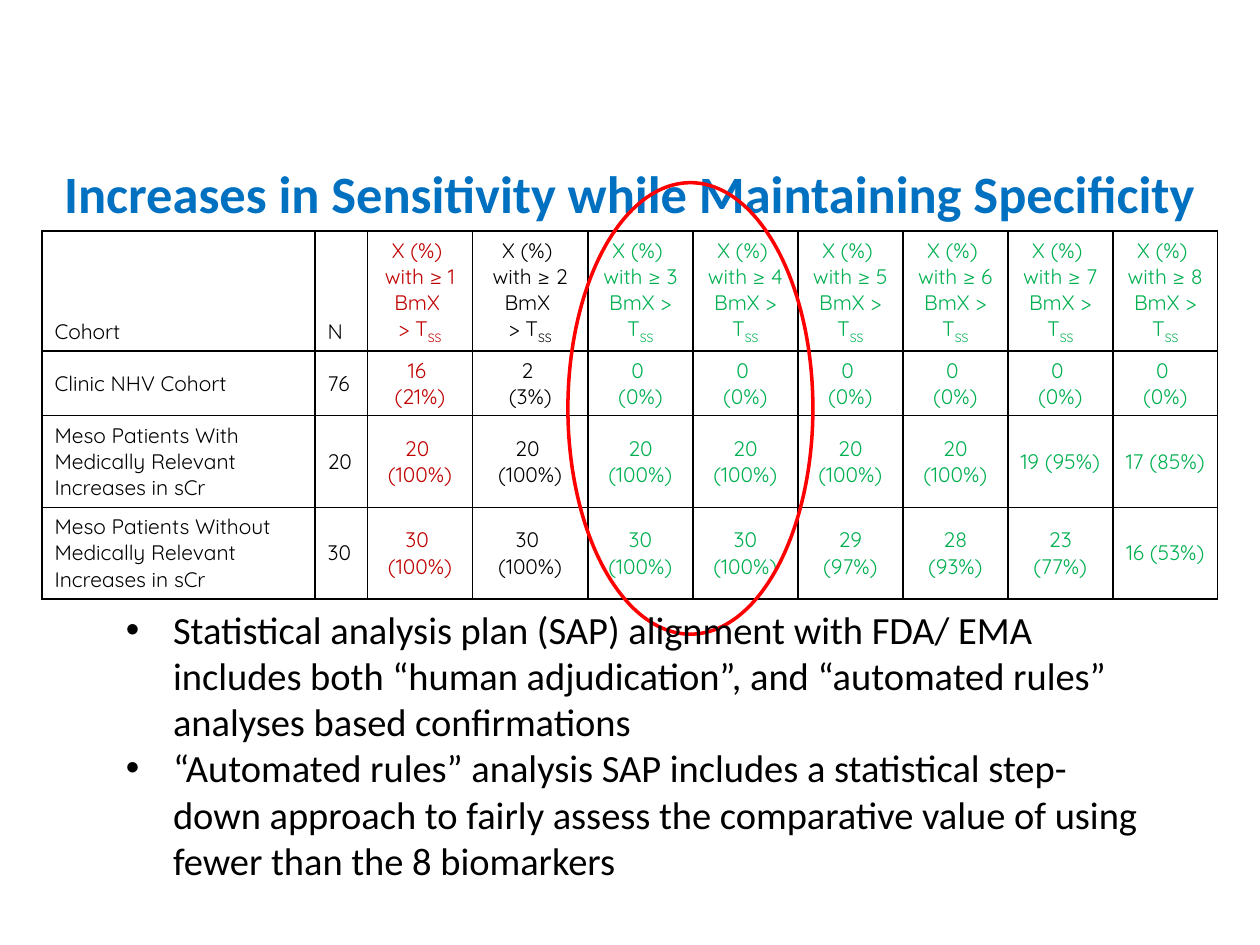
from lxml import etree
from pptx import Presentation
from pptx.dml.color import RGBColor
from pptx.enum.shapes import MSO_SHAPE
from pptx.enum.text import MSO_ANCHOR, MSO_AUTO_SIZE, PP_ALIGN
from pptx.oxml.ns import qn
from pptx.util import Pt

CENTER, LEFT = PP_ALIGN.CENTER, PP_ALIGN.LEFT
MIDDLE, BOTTOM, TOP = MSO_ANCHOR.MIDDLE, MSO_ANCHOR.BOTTOM, MSO_ANCHOR.TOP
GROW = MSO_AUTO_SIZE.SHAPE_TO_FIT_TEXT
OVAL = MSO_SHAPE.OVAL

BLACK, BLUE, RED = "000000", "0070C0", "FF0000"
DARK_RED, GREEN = "C00000", "00B050"

COLUMN_WIDTHS = [156, 30, 60, 66] + [60] * 6
COLUMN_COLORS = [BLACK, BLACK, DARK_RED, BLACK] + [GREEN] * 6
ROW_HEIGHTS = [68.5, 37, 52.4, 52.4]
COHORTS = [
    ["Clinic NHV Cohort", "76", "16 \n(21%)", "2 \n(3%)"] + ["0 \n(0%)"] * 6,
    ["Meso Patients With Medically Relevant Increases in sCr", "20",
     "20 \n(100%)", "20 \n(100%)"] + ["20 (100%)"] * 4
    + ["19 (95%)", "17 (85%)"],
    ["Meso Patients Without Medically Relevant Increases in sCr", "30",
     "30 \n(100%)", "30 \n(100%)", "30 (100%)", "30 (100%)",
     "29 (97%)", "28 (93%)", "23 (77%)", "16 (53%)"],
]
SAP_POINTS = [
    "Statistical analysis plan (SAP) alignment with FDA/ EMA includes both "
    "“human adjudication”, and “automated rules” analyses based confirmations",
    "“Automated rules” analysis SAP includes a statistical step-down approach "
    "to fairly assess the comparative value of using fewer than the 8 biomarkers",
]


def rgb(color):
    return RGBColor.from_string(color)


def add_run(paragraph, text, size, color, font="Calibri", bold=False):
    run = paragraph.add_run()
    run.text = text
    run.font.name = font
    run.font.size = Pt(size)
    run.font.bold = bold
    run.font.color.rgb = rgb(color)
    return run


def add_text_frame(slide, left, top, width, height, anchor):
    box = slide.shapes.add_textbox(Pt(left), Pt(top), Pt(width), Pt(height))
    frame = box.text_frame
    frame.word_wrap = True
    frame.vertical_anchor = anchor
    return frame


def add_title(slide, text):
    frame = add_text_frame(slide, 24, 72.7, 672, 74, MIDDLE)
    paragraph = frame.paragraphs[0]
    paragraph.alignment = CENTER
    add_run(paragraph, text, 30, BLUE, bold=True)


def add_borders(cell):
    properties = cell._tc.get_or_add_tcPr()
    for side in ("lnL", "lnR", "lnT", "lnB"):
        line = etree.SubElement(properties, qn(f"a:{side}"), w=str(Pt(1)))
        fill = etree.SubElement(line, qn("a:solidFill"))
        etree.SubElement(fill, qn("a:srgbClr"), val=BLACK)


def fill_cell(cell, text, color, alignment, anchor, subscript=""):
    add_borders(cell)
    cell.fill.background()
    cell.vertical_anchor = anchor
    paragraph = cell.text_frame.paragraphs[0]
    paragraph.alignment = alignment
    for index, line in enumerate(text.split("\n")):
        if index:
            paragraph.add_line_break()
        add_run(paragraph, line, 12, color, "Quicksand")
    if subscript:
        run = add_run(paragraph, subscript, 12, color, "Quicksand")
        run.font._element.set("baseline", "-25000")


def threshold_header(count):
    """Column heading; only the first two counts break before the sign."""
    return f"X (%) \nwith ≥ {count} BmX " + ("\n> T" if count < 3 else "> T")


def add_cohort_table(slide):
    headers = ["Cohort", "N"] + [threshold_header(n) for n in range(1, 9)]
    rows = [headers] + COHORTS
    table = slide.shapes.add_table(
        len(rows), len(headers), Pt(24), Pt(132),
        Pt(sum(COLUMN_WIDTHS)), Pt(sum(ROW_HEIGHTS))).table
    for column, width in zip(table.columns, COLUMN_WIDTHS):
        column.width = Pt(width)
    for row, height in zip(table.rows, ROW_HEIGHTS):
        row.height = Pt(height)
    for r, texts in enumerate(rows):
        for c, text in enumerate(texts):
            fill_cell(table.cell(r, c), text, COLUMN_COLORS[c],
                      CENTER if c > 1 else LEFT,
                      MIDDLE if r else BOTTOM,
                      "SS" if r == 0 and c > 1 else "")


def add_highlight(slide):
    ring = slide.shapes.add_shape(OVAL, Pt(324.5), Pt(104.4), Pt(140), Pt(258))
    ring.shadow.inherit = False
    ring.fill.background()
    ring.line.color.rgb = rgb(RED)
    ring.line.width = Pt(2)


def add_bullets(slide, points):
    frame = add_text_frame(slide, -7.2, 342.7, 673.2, 167, TOP)
    frame.auto_size = GROW
    for index, point in enumerate(points):
        paragraph = frame.add_paragraph() if index else frame.paragraphs[0]
        paragraph.level = 2
        properties = paragraph._p.get_or_add_pPr()
        properties.set("marL", str(Pt(99)))
        properties.set("indent", str(Pt(-27)))
        etree.SubElement(properties, qn("a:buFont"), typeface="Arial")
        etree.SubElement(properties, qn("a:buChar"), char="•")
        add_run(paragraph, point, 22, BLACK)


def main():
    deck = Presentation()
    deck.slide_width, deck.slide_height = Pt(720), Pt(540)
    slide = deck.slides.add_slide(deck.slide_layouts[6])
    add_title(slide, "Increases in Sensitivity while Maintaining Specificity")
    add_cohort_table(slide)
    add_highlight(slide)
    add_bullets(slide, SAP_POINTS)
    deck.save("out.pptx")


if __name__ == "__main__":
    main()
